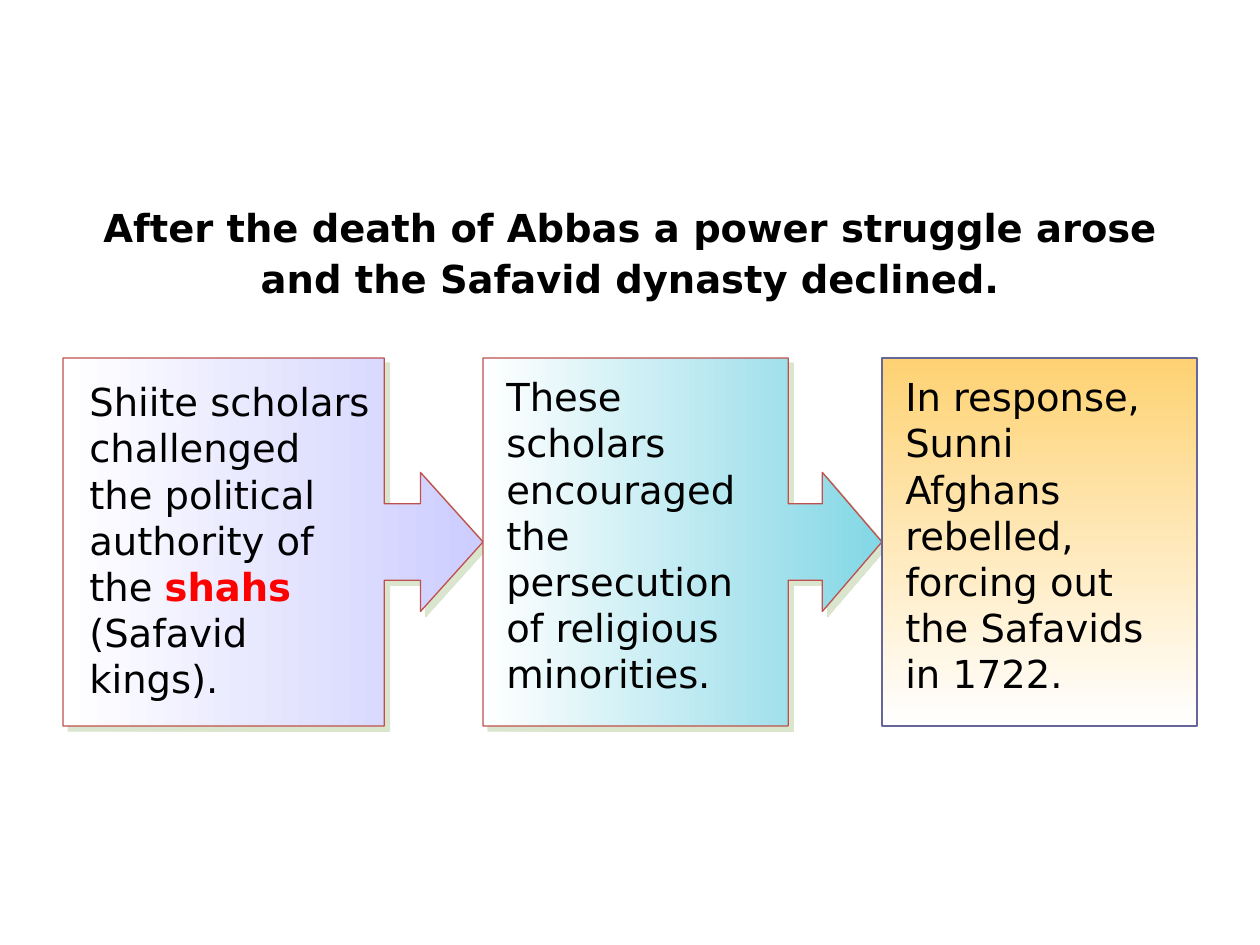
from lxml.etree import SubElement
from pptx import Presentation
from pptx.dml.color import RGBColor
from pptx.enum.shapes import MSO_SHAPE
from pptx.enum.text import MSO_AUTO_SIZE, PP_ALIGN
from pptx.oxml.ns import qn
from pptx.util import Emu, Pt

PX = 914400 // 126
FONT, FONT_SIZE = "DejaVu Sans", 22
BLACK, RED, WHITE = "000000", "FF0000", "FFFFFF"
TOP, HEIGHT = 358, 368

TITLE = "After the death of Abbas a power struggle arose\vand the Safavid dynasty declined."
TITLE_BOX = (63, 193, 1134, 115)

# Runs are (text, colour, bold); a callout ends where the next step begins.
STEPS = [
    {"left": 63, "width": 420, "head": 0.17, "gradient": (WHITE, "CDCDFF"),
     "text_box": (77, 372, 323, 406),
     "runs": [("Shiite scholars challenged \vthe political authority of the ", BLACK, False),
              ("shahs", RED, True),
              (" (Safavid kings).", BLACK, False)]},
    {"left": 483, "width": 399, "head": 0.162, "gradient": (WHITE, "83D7E5"),
     "text_box": (494, 367, 325, 335),
     "runs": [("These \vscholars encouraged the persecution \vof religious minorities.",
               BLACK, False)]},
    {"left": 882, "width": 315, "head": None, "gradient": ("FED273", WHITE),
     "text_box": (893, 367, 292, 335),
     "runs": [("In response, Sunni Afghans rebelled, forcing out the Safavids in 1722.",
               BLACK, False)]},
]


def px(*lengths):
    return [Emu(length * PX) for length in lengths]


def rgb(hex_colour):
    return RGBColor.from_string(hex_colour)


def add_text(slide, box, runs):
    """Add a wrapped text box with one paragraph and return the paragraph."""
    frame = slide.shapes.add_textbox(*px(*box)).text_frame
    frame.word_wrap = True
    frame.auto_size = MSO_AUTO_SIZE.NONE
    paragraph = frame.paragraphs[0]
    for text, colour, bold in runs:
        # A vertical tab marks a line break inside a run.
        for index, line in enumerate(text.split("\v")):
            if index:
                paragraph.add_line_break()
            run = paragraph.add_run()
            run.text = line
            run.font.name = FONT
            run.font.size = Pt(FONT_SIZE)
            run.font.bold = bold
            run.font.color.rgb = rgb(colour)
    return paragraph


def add_shadow(shape):
    effects = shape._element.spPr.find(qn("a:effectLst"))
    shadow = SubElement(effects, qn("a:outerShdw"), blurRad="0", dist=str(Pt(4.2)),
                        dir=str(45 * 60000), algn="ctr", rotWithShape="0")
    colour = SubElement(shadow, qn("a:srgbClr"), val="ADC793")
    SubElement(colour, qn("a:alpha"), val="46000")


def add_step(slide, step):
    is_callout = step["head"] is not None
    preset = MSO_SHAPE.RIGHT_ARROW_CALLOUT if is_callout else MSO_SHAPE.RECTANGLE
    shape = slide.shapes.add_shape(preset, *px(step["left"], TOP, step["width"], HEIGHT))
    shape.shadow.inherit = False
    shape.fill.gradient()
    shape.fill.gradient_angle = 0 if is_callout else 270
    for stop, colour in zip(shape.fill.gradient_stops, step["gradient"]):
        stop.color.rgb = rgb(colour)
    shape.line.width = Pt(0.75)
    shape.line.color.rgb = rgb("C0504D" if is_callout else "666699")
    if is_callout:
        for index, value in enumerate((0.208, 0.189, step["head"], 0.765)):
            shape.adjustments[index] = value
        add_shadow(shape)
    add_text(slide, step["text_box"], step["runs"])


def main():
    presentation = Presentation()
    presentation.slide_width, presentation.slide_height = px(1260, 945)
    slide = presentation.slides.add_slide(presentation.slide_layouts[6])
    title = add_text(slide, TITLE_BOX, [(TITLE, BLACK, True)])
    title.alignment = PP_ALIGN.CENTER
    title.line_spacing = 1.1
    for step in STEPS:
        add_step(slide, step)
    presentation.save("out.pptx")


if __name__ == "__main__":
    main()
